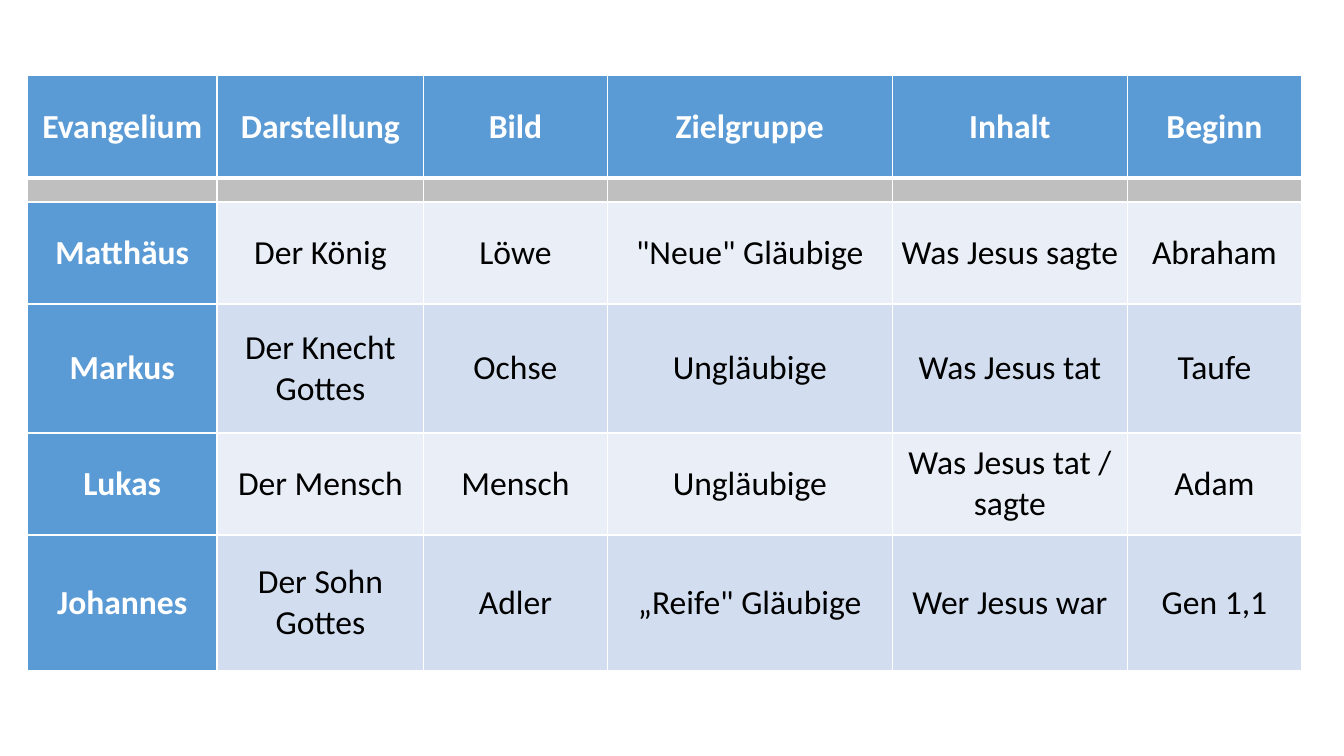
import pptx
import pptx.util
import pptx.dml.color
import pptx.enum.text
import pptx.oxml.ns
from lxml import etree
from pptx.util import Cm

COLORS = {
    "header": "5B9BD5",
    "separator": "BFBFBF",
    "light": "EAEFF7",
    "dark": "D2DEEF",
    "white": "FFFFFF",
    "black": "000000",
}
COLUMN_WIDTHS = [4.78, 5.21, 4.62, 7.19, 5.92, 4.39]
ROW_HEIGHTS = [2.57, 0.61, 2.57, 3.25, 2.57, 3.43]
HEADINGS = ["Evangelium", "Darstellung", "Bild", "Zielgruppe", "Inhalt", "Beginn"]
GOSPELS = [
    ["Matthäus", "Der König", "Löwe", '"Neue" Gläubige', "Was Jesus sagte", "Abraham"],
    ["Markus", "Der Knecht Gottes", "Ochse", "Ungläubige", "Was Jesus tat", "Taufe"],
    ["Lukas", "Der Mensch", "Mensch", "Ungläubige", "Was Jesus tat / sagte", "Adam"],
    ["Johannes", "Der Sohn Gottes", "Adler", '„Reife" Gläubige', "Wer Jesus war", "Gen 1,1"],
]


def rgb(name):
    return pptx.dml.color.RGBColor.from_string(COLORS[name])


def add_element(parent, tag, **attributes):
    return etree.SubElement(parent, pptx.oxml.ns.qn(tag), **attributes)


def write_text(cell, text, size=24, color="black", bold=False):
    paragraph = cell.text_frame.paragraphs[0]
    paragraph.alignment = pptx.enum.text.PP_ALIGN.CENTER
    run = paragraph.add_run()
    run.text = text
    run.font.name = "Calibri"
    run.font.size = pptx.util.Pt(size)
    run.font.bold = bold
    run.font.color.rgb = rgb(color)


def shrink_empty_cell(cell, size=8):
    paragraph = cell.text_frame.paragraphs[0]
    add_element(paragraph._p, "a:endParaRPr", sz=str(size * 100))


def set_borders(cell, top=1, bottom=1):
    properties = cell._tc.get_or_add_tcPr()
    for side, width in {"L": 1, "R": 1, "T": top, "B": bottom}.items():
        line = add_element(properties, f"a:ln{side}", w=str(pptx.util.Pt(width)))
        fill = add_element(line, "a:solidFill")
        add_element(fill, "a:srgbClr", val=COLORS["white"])


def format_cell(cell, fill, **borders):
    cell.margin_left = cell.margin_right = Cm(0.18)
    cell.margin_top = cell.margin_bottom = 0
    cell.vertical_anchor = pptx.enum.text.MSO_ANCHOR.MIDDLE
    set_borders(cell, **borders)
    cell.fill.solid()
    cell.fill.fore_color.rgb = rgb(fill)


def add_gospel_table(slide):
    frame = slide.shapes.add_table(
        len(ROW_HEIGHTS), len(COLUMN_WIDTHS), Cm(0.69), Cm(1.91),
        Cm(sum(COLUMN_WIDTHS)), Cm(sum(ROW_HEIGHTS)),
    )
    table = frame.table
    for column, width in zip(table.columns, COLUMN_WIDTHS):
        column.width = Cm(width)
    for row, height in zip(table.rows, ROW_HEIGHTS):
        row.height = Cm(height)

    for index, heading in enumerate(HEADINGS):
        header = table.cell(0, index)
        format_cell(header, "header", bottom=3)
        write_text(header, heading, color="white", bold=True)
        separator = table.cell(1, index)
        format_cell(separator, "separator", top=3)
        shrink_empty_cell(separator)

    for row_index, gospel in enumerate(GOSPELS):
        band = "dark" if row_index % 2 else "light"
        for column_index, text in enumerate(gospel):
            is_name = column_index == 0
            cell = table.cell(row_index + 2, column_index)
            format_cell(cell, "header" if is_name else band)
            write_text(cell, text, color="white" if is_name else "black", bold=is_name)


def main():
    presentation = pptx.Presentation()
    presentation.slide_width = Cm(33.87)
    presentation.slide_height = Cm(19.05)
    slide = presentation.slides.add_slide(presentation.slide_layouts[6])
    add_gospel_table(slide)
    presentation.save("out.pptx")


if __name__ == "__main__":
    main()
